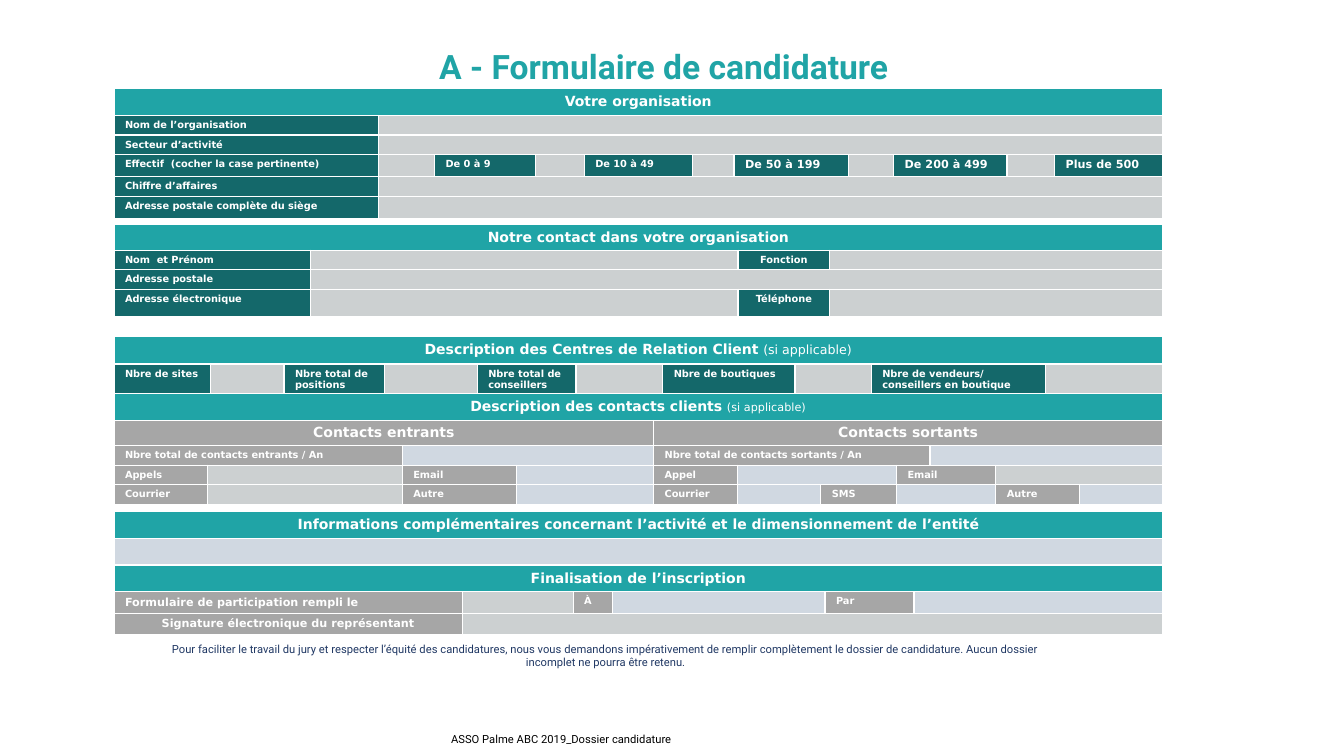
from dataclasses import dataclass

from lxml import etree
from pptx import Presentation
from pptx.dml.color import RGBColor
from pptx.enum.text import MSO_ANCHOR, MSO_AUTO_SIZE, PP_ALIGN
from pptx.oxml.ns import qn
from pptx.util import Pt

LEFT, MID = PP_ALIGN.LEFT, PP_ALIGN.CENTER
TOP, CENTER = MSO_ANCHOR.TOP, MSO_ANCHOR.MIDDLE
FIXED = MSO_AUTO_SIZE.NONE
SANS, ROBOTO = "DejaVu Sans", "Roboto"
HEX = {
    "teal": "20A4A6", "dark": "14686A", "gray": "A6A6A6", "pale": "CCD0D1",
    "blue": "D0D8E1", "navy": "203864", "white": "FFFFFF", "black": "000000",
}
X, WIDTH = 81.4, 749  # shared by all the form tables


@dataclass
class Cell:
    fill: str
    text: str = ""
    span: int = 1
    size: float = 7
    align: int = LEFT
    note: str = ""
    small: float = 8


def head(text, span, note="", small=8):
    return [Cell("teal", text, span, 10, MID, note, small)]


def dark(text, size=7, align=LEFT):
    return Cell("dark", text, 1, size, align)


def gray(text, span=1, size=7, align=LEFT):
    return Cell("gray", text, span, size, align)


def pale(span=1):
    return Cell("pale", span=span)


def blue(span=1):
    return Cell("blue", span=span)


def color(name):
    return RGBColor.from_string(HEX[name])


def add_run(para, text, size, font, tint, bold=False):
    run = para.add_run()
    run.text = text
    run.font.size = Pt(size)
    run.font.name = font
    run.font.bold = bold
    run.font.color.rgb = color(tint)


def edge(cell):
    """Give a cell thin white borders and a small size for empty text."""
    props = cell._tc.get_or_add_tcPr()
    for side in ("lnL", "lnR", "lnT", "lnB"):
        line = etree.SubElement(props, qn("a:" + side), w=str(Pt(1)))
        fill = etree.SubElement(line, qn("a:solidFill"))
        etree.SubElement(fill, qn("a:srgbClr"), val=HEX["white"])
    para = cell.text_frame.paragraphs[0]._p
    etree.SubElement(para, qn("a:endParaRPr"), sz="700")


def fill_cell(cell, data):
    cell.fill.solid()
    cell.fill.fore_color.rgb = color(data.fill)
    cell.vertical_anchor = TOP
    if not data.text:
        return
    para = cell.text_frame.paragraphs[0]
    para.alignment = data.align
    add_run(para, data.text, data.size, SANS, "white", True)
    if data.note:
        add_run(para, " ", data.size, SANS, "white", True)
        add_run(para, data.note, data.small, SANS, "white")


def add_form(slide, y, cols, sizes, rows):
    """Draw one form table; the spans in each row add up to all columns."""
    frame = slide.shapes.add_table(len(rows), len(cols), Pt(X), Pt(y),
                                   Pt(WIDTH), Pt(sum(sizes)))
    table = frame.table
    table.first_row = table.horz_banding = False
    for col, width in zip(table.columns, cols):
        col.width = Pt(width)
    for row, height in zip(table.rows, sizes):
        row.height = Pt(height)
    for cell in table.iter_cells():
        edge(cell)
        cell.margin_left = cell.margin_right = Pt(7.9)
        cell.margin_top, cell.margin_bottom = Pt(2.9), 0
    for i, row in enumerate(rows):
        j = 0
        for data in row:
            cell = table.cell(i, j)
            cell.margin_top = Pt(3.6 if data.fill == "teal" else 2.9)
            if data.span > 1:
                cell.merge(table.cell(i, j + data.span - 1))
            fill_cell(cell, data)
            j += data.span


def set_text(shape, box, text, size, tint, bold=False, anchor=TOP):
    shape.left, shape.top, shape.width, shape.height = map(Pt, box)
    frame = shape.text_frame
    frame.word_wrap = True
    frame.auto_size = FIXED
    frame.vertical_anchor = anchor
    para = frame.paragraphs[0]
    para.alignment = MID
    add_run(para, text, size, ROBOTO, tint, bold)
    return frame


def add_label(slide, box, *args, **style):
    return set_text(slide.shapes.add_textbox(*map(Pt, box)), box, *args, **style)


def add_firm(slide, y):
    staff = [dark("Effectif  (cocher la case pertinente)")]
    for text, size in (("De 0 à 9", 7), ("De 10 à 49", 7), ("De 50 à 199", 8),
                       ("De 200 à 499", 8), ("Plus de 500", 8)):
        staff += [pale(), dark(text, size)]
    add_form(slide, y, [189, 40, 72, 35, 77, 30, 82, 32, 81, 34, 77],
             [19, 14, 14, 15.5, 14.5, 15.5], [
                 head("Votre organisation", 11),
                 [dark("Nom de l’organisation"), pale(10)],
                 [dark("Secteur d’activité"), pale(10)],
                 staff,
                 [dark("Chiffre d’affaires"), pale(10)],
                 [dark("Adresse postale complète du siège"), pale(10)]])


def add_person(slide, y):
    add_form(slide, y, [140.5, 305.3, 65.5, 237.7], [18.5, 14, 14, 19.5], [
        head("Notre contact dans votre organisation", 4),
        [dark("Nom  et Prénom"), pale(), dark("Fonction", align=MID), pale()],
        [dark("Adresse postale"), pale(3)],
        [dark("Adresse électronique"), pale(),
         dark("Téléphone", align=MID), pale()]])


def add_sites(slide, y):
    counts = []
    for text in ("Nbre de sites", "Nbre total de positions",
                 "Nbre total de conseillers", "Nbre de boutiques",
                 "Nbre de vendeurs/ conseillers en boutique"):
        counts += [dark(text), pale()]
    add_form(slide, y, [69, 52.5, 72, 66, 70.5, 62, 94.5, 54.5, 124.5, 83.5],
             [19.5, 21], [
                 head("Description des Centres de Relation Client", 10,
                      "(si applicable)", 9),
                 counts])


def add_calls(slide, y):
    add_form(slide, y, [67, 139, 81.5, 98, 60, 59.5, 54, 24, 47, 59.5, 59.5],
             [19.5, 18, 14, 14, 14], [
                 head("Description des contacts clients", 11, "(si applicable)"),
                 [gray("Contacts entrants", 4, 10, MID),
                  gray("Contacts sortants", 7, 10, MID)],
                 [gray("Nbre total de contacts entrants / An", 2), blue(2),
                  gray("Nbre total de contacts sortants / An", 4), blue(3)],
                 [gray("Appels"), pale(), gray("Email"), blue(),
                  gray("Appel"), blue(2), gray("Email", 2), pale(2)],
                 [gray("Courrier"), pale(), gray("Autre"), blue(),
                  gray("Courrier"), blue(), gray("SMS"), blue(2),
                  gray("Autre"), blue()]])


def add_extra(slide, y):
    title = ("Informations complémentaires concernant l’activité "
             "et le dimensionnement de l’entité")
    add_form(slide, y, [WIDTH], [19, 19], [head(title, 1), [blue()]])


def add_sign(slide, y):
    add_form(slide, y, [249, 79, 28, 152, 63.5, 177.5], [19, 15.5, 15.5], [
        head("Finalisation de l’inscription", 6),
        [gray("Formulaire de participation rempli le", size=8), pale(),
         gray("À"), blue(), gray("Par"), blue()],
        [gray("Signature électronique du représentant", 1, 8, MID), pale(5)]])


def main():
    deck = Presentation()
    deck.slide_width, deck.slide_height = Pt(960), Pt(540)
    slide = deck.slides.add_slide(deck.slide_layouts[5])
    set_text(slide.shapes.title, (84.2, 29.5, 779.8, 31),
             "A - Formulaire de candidature", 24, "teal", bold=True)
    for part, y in ((add_firm, 63.4), (add_person, 160.2), (add_sites, 240.5),
                    (add_calls, 280.8), (add_extra, 365.4), (add_sign, 403.6)):
        part(slide, y)
    note = add_label(
        slide, (109.4, 458.6, 646.6, 22.3),
        "Pour faciliter le travail du jury et respecter l’équité des "
        "candidatures, nous vous demandons impérativement de remplir "
        "complètement le dossier de candidature. Aucun dossier incomplet "
        "ne pourra être retenu.", 8, "navy", anchor=CENTER)
    note.margin_top, note.margin_bottom = 0, Pt(2.9)
    add_label(slide, (259.2, 519.8, 283.7, 20.2),
              "ASSO Palme ABC 2019_Dossier candidature", 8, "black")
    deck.save("out.pptx")


if __name__ == "__main__":
    main()
